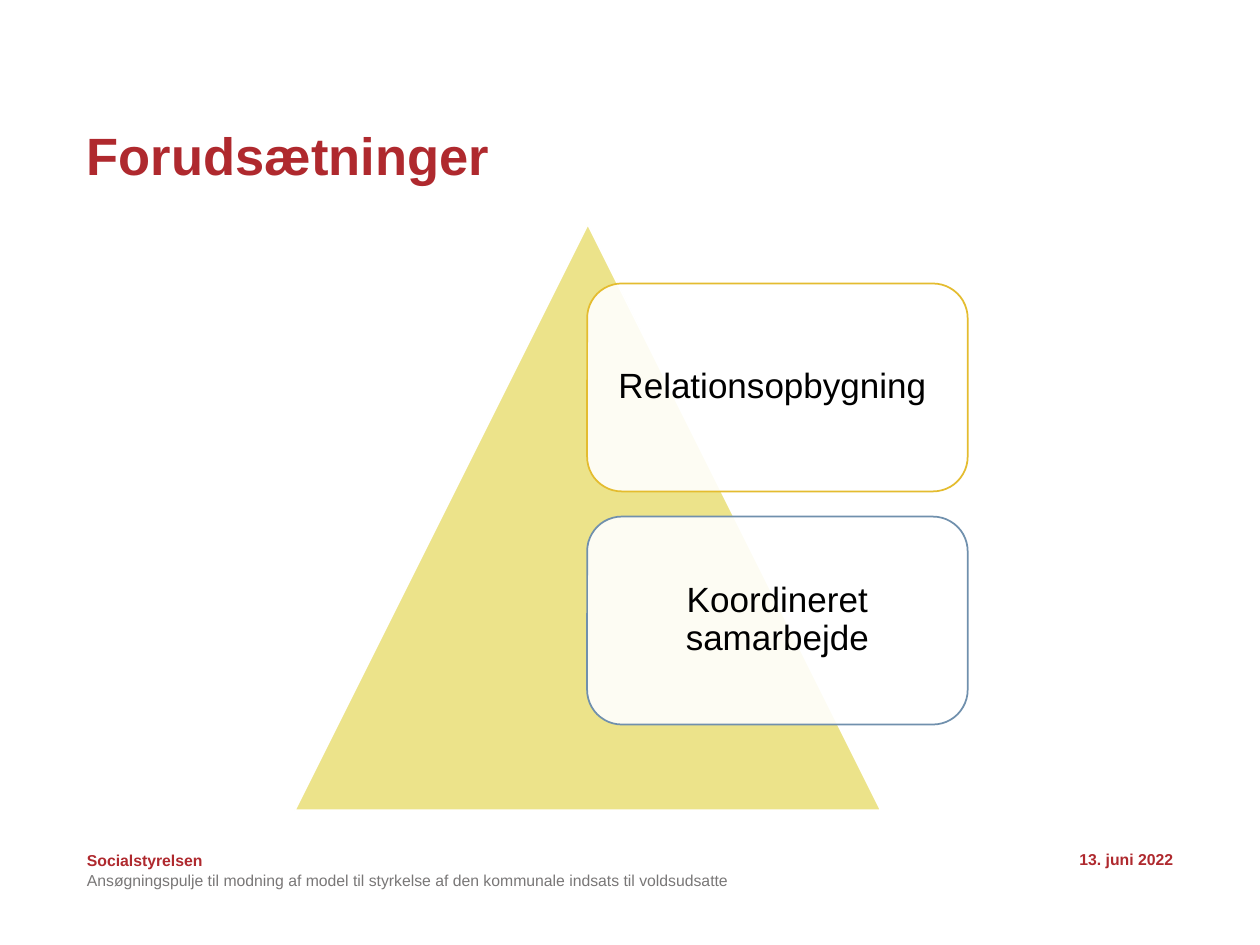
from dataclasses import dataclass

from lxml.etree import SubElement
from pptx import Presentation
from pptx.dml.color import RGBColor
from pptx.enum.shapes import MSO_SHAPE
from pptx.enum.text import MSO_ANCHOR, PP_ALIGN
from pptx.oxml.ns import qn
from pptx.util import Inches, Pt

COLORS = {
    "red": "AF292E",
    "grey": "797777",
    "black": "000000",
    "white": "FFFFFF",
    "sand": "ECE38A",
    "gold": "E4BC2F",
    "blue": "7090AD",
}
LEFT = 0.69
CARD_TOP, CARD_STEP = 2.25, 1.85


@dataclass
class Card:
    text: str
    line: str


@dataclass
class Label:
    text: str
    box: tuple[float, float, float, float]
    color: str = "red"
    bold: bool = True
    align: PP_ALIGN = PP_ALIGN.LEFT
    anchor: MSO_ANCHOR = MSO_ANCHOR.TOP


CARDS = [
    Card("Relationsopbygning ", "gold"),
    Card("Koordineret samarbejde", "blue"),
]
LABELS = [
    Label("Socialstyrelsen", (LEFT, 6.75, 1.18, 0.15)),
    Label("13. juni 2022", (7.06, 6.62, 2.25, 0.4),
          align=PP_ALIGN.RIGHT, anchor=MSO_ANCHOR.MIDDLE),
    Label("Ansøgningspulje til modning af model til styrkelse af den "
          "kommunale indsats til voldsudsatte", (LEFT, 6.86, 5.21, 0.2),
          color="grey", bold=False, anchor=MSO_ANCHOR.BOTTOM),
]


def rgb(name: str) -> RGBColor:
    return RGBColor.from_string(COLORS[name])


def write(shape, text: str, *, size: float, color: str, bold: bool = False,
          align: PP_ALIGN = PP_ALIGN.LEFT,
          anchor: MSO_ANCHOR = MSO_ANCHOR.MIDDLE,
          inset: float = 0, spacing: float = 1.0) -> None:
    frame = shape.text_frame
    frame.word_wrap = True
    frame.vertical_anchor = anchor
    frame.margin_left = frame.margin_right = Inches(inset)
    frame.margin_top = frame.margin_bottom = Inches(inset)
    para = frame.paragraphs[0]
    para.alignment = align
    para.line_spacing = spacing
    run = para.add_run()
    run.text = text
    font = run.font
    font.name, font.size, font.bold = "Arial", Pt(size), bold
    font.color.rgb = rgb(color)


def add_form(slide, kind: MSO_SHAPE, box: tuple, fill: str, line: str):
    form = slide.shapes.add_shape(kind, *map(Inches, box))
    form.shadow.inherit = False
    form.fill.solid()
    form.fill.fore_color.rgb = rgb(fill)
    form.line.color.rgb = rgb(line)
    form.line.width = Pt(1)
    return form


def set_alpha(shape, percent: int) -> None:
    """Set the opacity of a solid fill."""
    color = shape.fill._xPr.find(qn("a:solidFill"))[0]
    SubElement(color, qn("a:alpha"), val=str(percent * 1000))


def add_card(slide, card: Card, top: float) -> None:
    form = add_form(slide, MSO_SHAPE.ROUNDED_RECTANGLE,
                    (4.66, top, 3.02, 1.65), "white", card.line)
    set_alpha(form, 90)
    write(form, card.text, size=20, color="black", align=PP_ALIGN.CENTER,
          inset=0.08, spacing=0.9)


def add_label(slide, label: Label) -> None:
    box = slide.shapes.add_textbox(*map(Inches, label.box))
    write(box, label.text, size=9, color=label.color, bold=label.bold,
          align=label.align, anchor=label.anchor)


def main() -> None:
    deck = Presentation()
    deck.slide_width, deck.slide_height = Inches(10), Inches(7.5)
    slide = deck.slides.add_slide(deck.slide_layouts[5])

    title = slide.shapes.title
    title.left, title.top = Inches(LEFT), Inches(0.84)
    title.width, title.height = Inches(8.64), Inches(0.83)
    write(title, "Forudsætninger", size=30, color="red", bold=True,
          spacing=0.9)

    add_form(slide, MSO_SHAPE.ISOSCELES_TRIANGLE, (2.34, 1.78, 4.65, 4.65),
             "sand", "white")
    for i, card in enumerate(CARDS):
        add_card(slide, card, CARD_TOP + i * CARD_STEP)
    for label in LABELS:
        add_label(slide, label)

    deck.save("out.pptx")


if __name__ == "__main__":
    main()
